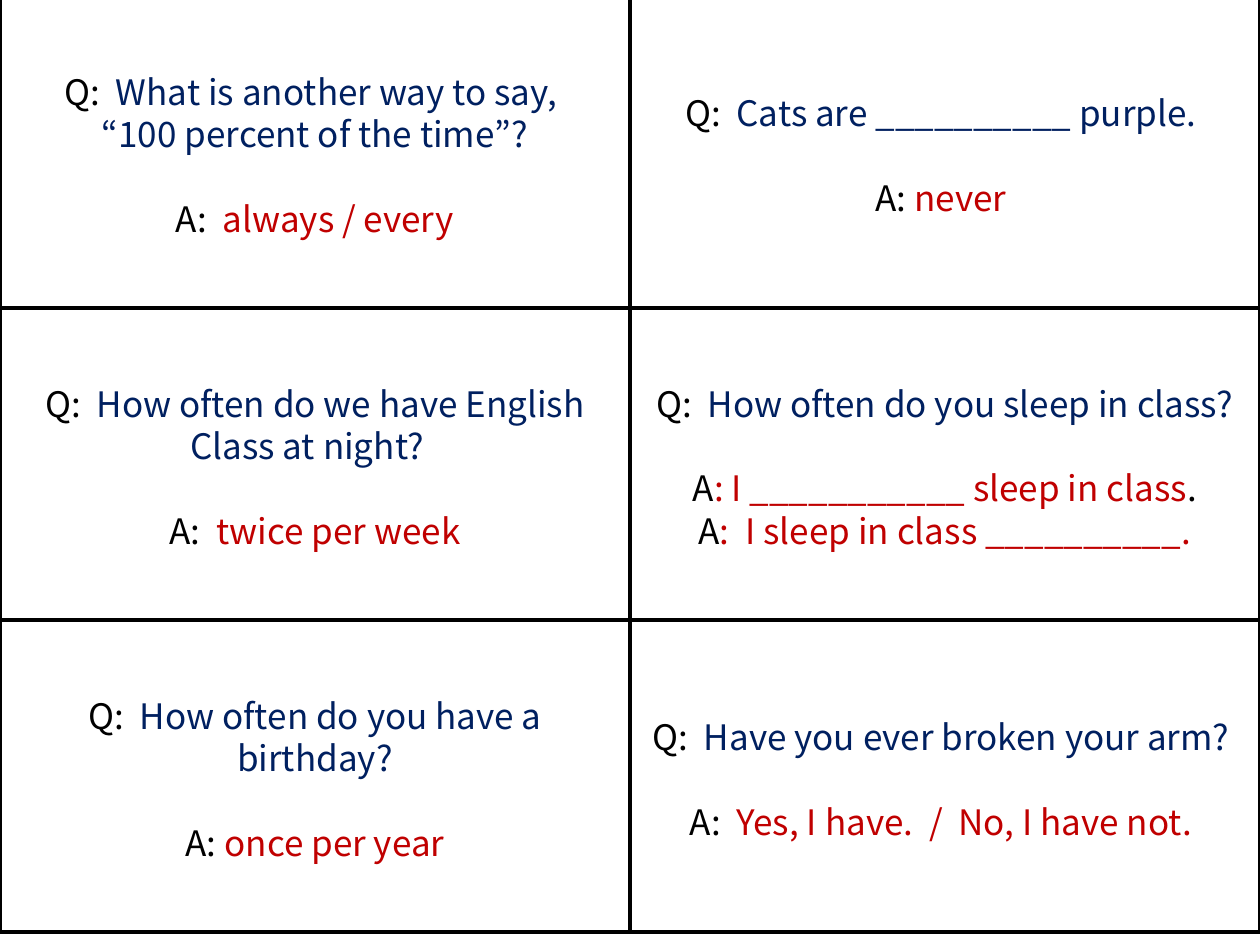
import pptx
import pptx.dml.color
import pptx.enum.shapes
import pptx.enum.text
import pptx.util

COLORS = {"paper": "FFFFFF", "ink": "000000", "question": "002060", "answer": "C00000"}
FONT = "Noto Sans CJK KR"
FONT_SIZE = 20
LINE_HEIGHT = 24.2
SLIDE_WIDTH, SLIDE_HEIGHT = 10, 7.5
COLUMNS = 2
CARD_WIDTH = SLIDE_WIDTH / COLUMNS
CARD_HEIGHT = SLIDE_HEIGHT * 0.33
GRID_TOP = -0.03

CARDS = [
    ("What is another way to say, \v“100 percent of the time”?",
     [[("ink", "A:  "), ("answer", "always / every")]]),
    ("Cats are __________ purple. ",
     [[("ink", "A: "), ("answer", "never ")]]),
    ("How often do we have English Class at night?  ",
     [[("ink", "A:  "), ("answer", "twice per week")]]),
    ("How often do you sleep in class?",
     [[("ink", "A"), ("answer", ": I ___________ sleep in class"), ("ink", ".")],
      [("ink", "A"), ("answer", ":  I sleep in class __________.")]]),
    ("How often do you have a birthday?",
     [[("ink", "A: "), ("answer", "once per year")]]),
    ("Have you ever broken your arm? ",
     [[("ink", "A:  "), ("answer", "Yes, I have.  /  No, I have not. ")]]),
]


def color(name):
    """Return the named colour as an RGB value."""
    return pptx.dml.color.RGBColor.from_string(COLORS[name])


def add_span(para, name, text):
    """Append coloured text, turning vertical tabs into line breaks."""
    for index, line in enumerate(text.split("\v")):
        if index:
            para.add_line_break()
        span = para.add_run()
        span.text = line
        span.font.color.rgb = color(name)


def fill_paragraph(para, spans, space_before=0):
    """Format one centred paragraph and write its spans."""
    para.alignment = pptx.enum.text.PP_ALIGN.CENTER
    para.line_spacing = pptx.util.Pt(LINE_HEIGHT)
    para.space_before = pptx.util.Pt(space_before)
    para.font.name = FONT
    para.font.size = pptx.util.Pt(FONT_SIZE)
    for name, text in spans:
        add_span(para, name, text)


def add_box(page, column, row):
    """Draw an outlined card at a grid position and return its text frame."""
    box = page.shapes.add_shape(
        pptx.enum.shapes.MSO_SHAPE.RECTANGLE,
        pptx.util.Inches(column * CARD_WIDTH),
        pptx.util.Inches(GRID_TOP + row * CARD_HEIGHT),
        pptx.util.Inches(CARD_WIDTH),
        pptx.util.Inches(CARD_HEIGHT),
    )
    box.shadow.inherit = False
    box.fill.solid()
    box.fill.fore_color.rgb = color("paper")
    box.line.color.rgb = color("ink")
    box.line.width = pptx.util.Pt(2)
    frame = box.text_frame
    frame.word_wrap = True
    frame.vertical_anchor = pptx.enum.text.MSO_ANCHOR.MIDDLE
    frame.margin_top = pptx.util.Inches(0.09)
    return frame


def add_card(page, column, row, question, answers):
    """Add a card with a question and its answers one blank line below."""
    frame = add_box(page, column, row)
    fill_paragraph(frame.paragraphs[0], [("ink", "Q:  "), ("question", question)])
    for index, spans in enumerate(answers):
        gap = 0 if index else LINE_HEIGHT
        fill_paragraph(frame.add_paragraph(), spans, gap)


def main():
    """Build the grid of question cards and save the deck."""
    deck = pptx.Presentation()
    deck.slide_width = pptx.util.Inches(SLIDE_WIDTH)
    deck.slide_height = pptx.util.Inches(SLIDE_HEIGHT)
    page = deck.slides.add_slide(deck.slide_layouts[6])
    for index, (question, answers) in enumerate(CARDS):
        row, column = divmod(index, COLUMNS)
        add_card(page, column, row, question, answers)
    deck.save("out.pptx")


if __name__ == "__main__":
    main()
